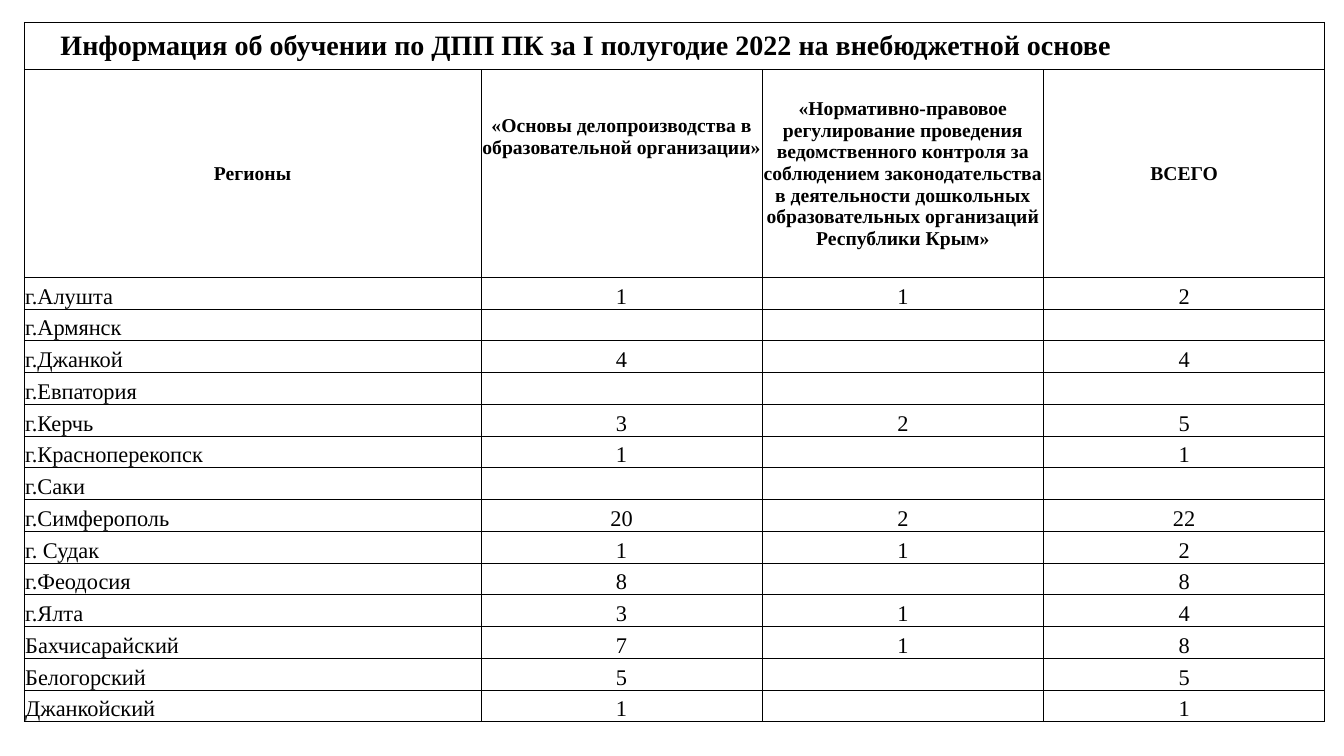
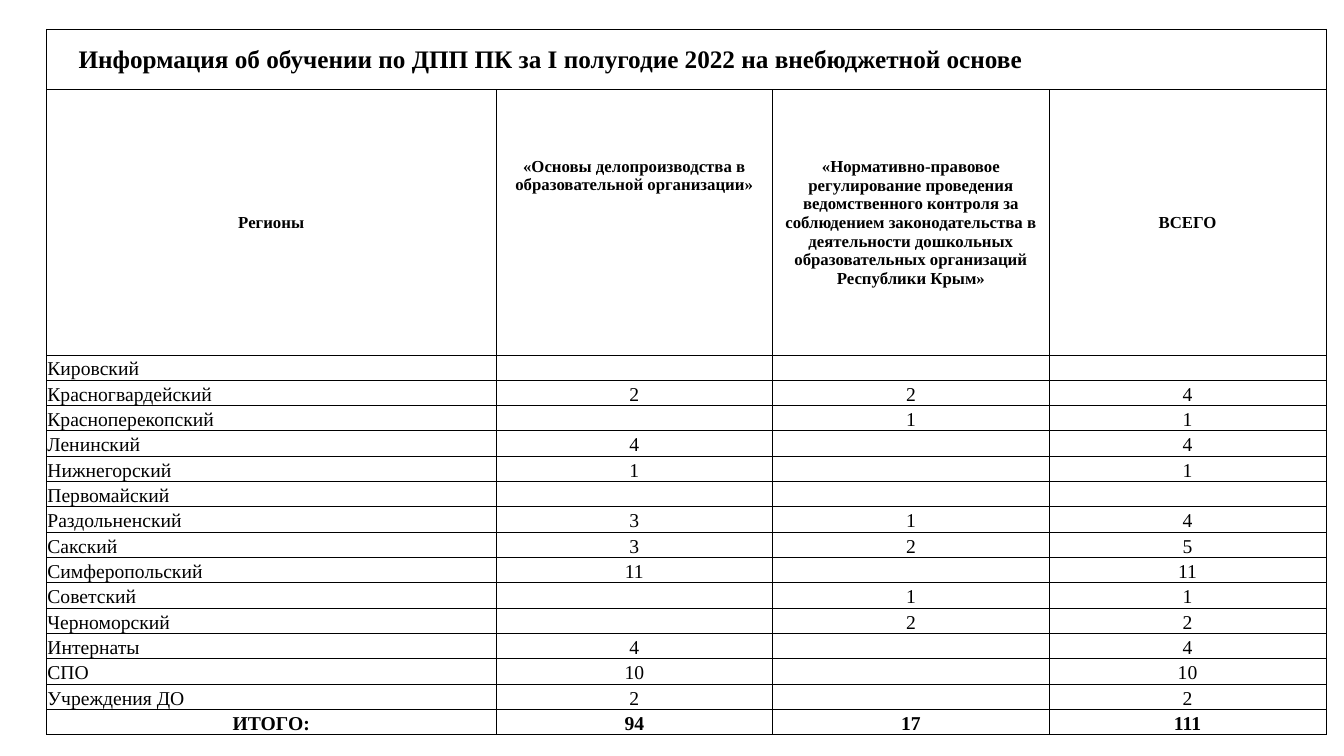
import pptx
import pptx.util
import pptx.dml.color
import pptx.enum.text
import pptx.oxml.ns
import lxml.etree
from dataclasses import dataclass

Inches = pptx.util.Inches
Pt = pptx.util.Pt
qn = pptx.oxml.ns.qn
ALIGN = pptx.enum.text.PP_ALIGN
ANCHOR = pptx.enum.text.MSO_ANCHOR


@dataclass(frozen=True)
class Theme:
    font: str = "Times New Roman"
    ink: str = "000000"
    border: float = 0.5
    inset: float = 0.01
    large: tuple = (20, 14, 16)  # title, heading, body
    small: tuple = (18, 12, 14)


theme = Theme()

# Wording shared by both slides
TITLE = "Информация об обучении по ДПП ПК за I полугодие 2022 на внебюджетной основе"
HEADINGS = (
    "Регионы",
    "«Основы делопроизводства в образовательной организации»",
    "«Нормативно-правовое регулирование проведения ведомственного контроля за "
    "соблюдением законодательства в деятельности дошкольных образовательных "
    "организаций Республики Крым»",
    "ВСЕГО",
)
TOTAL = "ИТОГО:"

# Each region has its two course counts; the last column is their sum
tables = [
    dict(
        place=(0.24, 0.22, 12.9, 6.94), region_width=4.53, head_rows=(0.47, 1.33, 0.73),
        sizes=theme.large, indent=0.35,
        regions=[
            ("г.Алушта", 1, 1), ("г.Армянск", 0, 0), ("г.Джанкой", 4, 0),
            ("г.Евпатория", 0, 0), ("г.Керчь", 3, 2), ("г.Красноперекопск", 1, 0),
            ("г.Саки", 0, 0), ("г.Симферополь", 20, 2), ("г. Судак", 1, 1),
            ("г.Феодосия", 8, 0), ("г.Ялта", 3, 1), ("Бахчисарайский", 7, 1),
            ("Белогорский", 5, 0), ("Джанкойский", 1, 0),
        ],
    ),
    dict(
        place=(0.46, 0.29, 12.69, 7), region_width=4.46, head_rows=(0.6, 1.7, 0.93),
        sizes=theme.small, indent=0.31,
        regions=[
            ("Кировский", 0, 0), ("Красногвардейский", 2, 2), ("Красноперекопский", 0, 1),
            ("Ленинский", 4, 0), ("Нижнегорский", 1, 0), ("Первомайский", 0, 0),
            ("Раздольненский", 3, 1), ("Сакский", 3, 2), ("Симферопольский", 11, 0),
            ("Советский", 0, 1), ("Черноморский", 0, 2), ("Интернаты", 4, 0),
            ("СПО", 10, 0), ("Учреждения ДО", 2, 0), (TOTAL, 94, 17),
        ],
    ),
]


def write_cell(cell, text, *, size, bold=False, align=ALIGN.CENTER,
               anchor=ANCHOR.BOTTOM, indent=0, open_side=None):
    cell.margin_left = cell.margin_right = cell.margin_top = Inches(theme.inset)
    cell.margin_bottom = 0
    cell.vertical_anchor = anchor
    para = cell.text_frame.paragraphs[0]
    para.alignment = align
    if indent:
        para._p.get_or_add_pPr().set("marL", str(Inches(indent)))
    if text:
        span = para.add_run()
        span.text = text
        span.font.name = theme.font
        span.font.size = Pt(size)
        span.font.bold = bold
        span.font.color.rgb = pptx.dml.color.RGBColor.from_string(theme.ink)
    else:
        # Keeps an empty cell from stretching its row
        lxml.etree.SubElement(para._p, qn("a:endParaRPr"), sz=str(size * 100))

    # Borders, then no fill
    properties = cell._tc.get_or_add_tcPr()
    for side in "LRTB":
        line = lxml.etree.SubElement(properties, qn(f"a:ln{side}"), w=str(Pt(theme.border)))
        if side == open_side:
            lxml.etree.SubElement(line, qn("a:noFill"))
        else:
            fill = lxml.etree.SubElement(line, qn("a:solidFill"))
            lxml.etree.SubElement(fill, qn("a:srgbClr"), val=theme.ink)
    cell.fill.background()


deck = pptx.Presentation()
deck.slide_width, deck.slide_height = Inches(13.33), Inches(7.5)

for content in tables:
    page = deck.slides.add_slide(deck.slide_layouts[6])
    regions, head_rows = content["regions"], content["head_rows"]
    title_size, heading_size, body_size = content["sizes"]
    left, top, width, height = content["place"]

    # Table grid
    grid = page.shapes.add_table(
        len(head_rows) + len(regions), len(HEADINGS),
        Inches(left), Inches(top), Inches(width), Inches(height)).table
    grid.first_row = grid.horz_banding = False
    region_width = content["region_width"]
    count_width = (width - region_width) / (len(HEADINGS) - 1)
    for number, column in enumerate(grid.columns):
        column.width = Inches(count_width if number else region_width)
    body_row = (height - sum(head_rows)) / len(regions)
    for number, row in enumerate(grid.rows):
        row.height = Inches(head_rows[number] if number < len(head_rows) else body_row)

    # Title row
    grid.cell(0, 0).merge(grid.cell(0, len(HEADINGS) - 1))
    for number in range(len(HEADINGS)):
        write_cell(grid.cell(0, number), "" if number else TITLE, size=title_size, bold=True,
                   align=ALIGN.LEFT, anchor=ANCHOR.MIDDLE, indent=content["indent"])

    # Headings over two rows; the second column is left unmerged, with no line between
    for number, heading in enumerate(HEADINGS):
        upper, lower = grid.cell(1, number), grid.cell(2, number)
        split = number == 1
        if not split:
            upper.merge(lower)
        write_cell(upper, heading, size=heading_size, bold=True, anchor=ANCHOR.MIDDLE,
                   open_side="B" if split else None)
        write_cell(lower, "", size=heading_size, open_side="T" if split else None)

    # Regions and counts
    for row_number, (region, first, second) in enumerate(regions, len(head_rows)):
        is_total = region == TOTAL
        write_cell(grid.cell(row_number, 0), region, size=body_size, bold=is_total,
                   align=ALIGN.CENTER if is_total else ALIGN.LEFT)
        for number, count in enumerate((first, second, first + second), 1):
            write_cell(grid.cell(row_number, number), str(count or ""),
                       size=body_size, bold=is_total)

deck.save("out.pptx")
